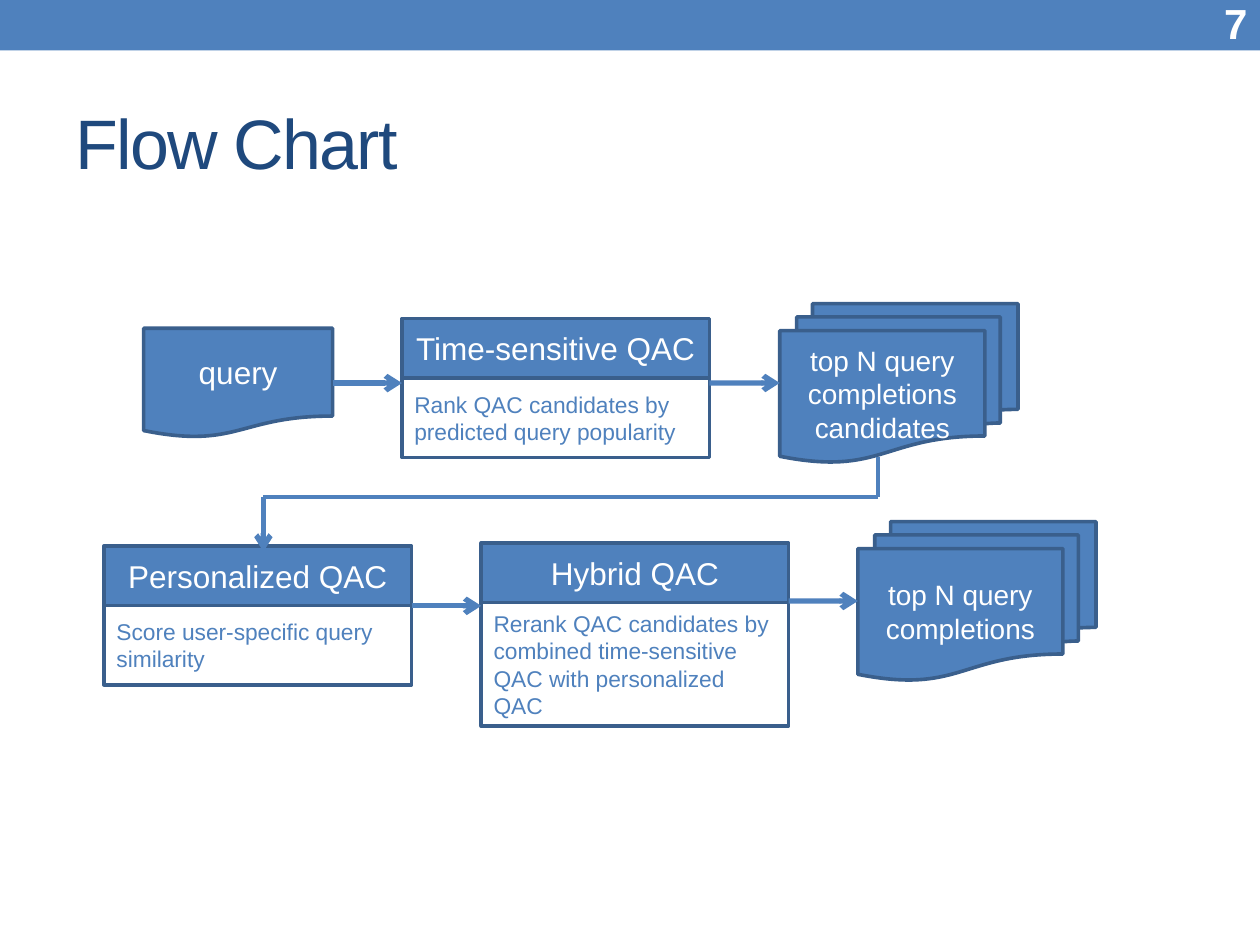
from dataclasses import dataclass

import pptx
import pptx.dml.color
import pptx.enum.shapes
import pptx.enum.text
import pptx.oxml.ns
import pptx.util
from lxml import etree

Pt = pptx.util.Pt
SHAPE = pptx.enum.shapes.MSO_SHAPE
ALIGN = pptx.enum.text.PP_ALIGN
COLORS = {"blue": "4F81BD", "outline": "3A5F8C", "title": "1F497D", "white": "FFFFFF"}
FONT = "Arial"
LEFT_SITE, RIGHT_SITE = 1, 3
STEP_WIDTH, HEADER_HEIGHT = 175.7, 34
STACK_WIDTH, STACK_HEIGHT = 136.1, 90.7


@dataclass
class Step:
    """A process box: coloured header above a white description."""
    left: float
    top: float
    body_height: float
    header: str
    body: str


@dataclass
class Document:
    kind: int
    left: float
    top: float
    width: float
    height: float
    text: str
    size: float


@dataclass
class Link:
    start: tuple
    end: tuple
    width: float = 3
    arrow: bool = True
    source: str = ""
    target: str = ""


STEPS = [
    Step(229.7, 182, 45.4, "Time-sensitive QAC",
         "Rank QAC candidates by predicted query popularity"),
    Step(59.5, 312, 45.4, "Personalized QAC", "Score user-specific query similarity"),
    Step(275, 310.3, 70.6, "Hybrid QAC",
         "Rerank QAC candidates by combined time-sensitive QAC with personalized QAC"),
]

DOCUMENTS = {
    "query": Document(SHAPE.FLOWCHART_DOCUMENT, 82.1, 187.6, 108, 62.6, "query", 18),
    "candidates": Document(SHAPE.FLOWCHART_MULTIDOCUMENT, 445.6, 173.5, STACK_WIDTH,
                           STACK_HEIGHT, "top N query completions\ncandidates", 16),
    "completions": Document(SHAPE.FLOWCHART_MULTIDOCUMENT, 490.2, 298.1, STACK_WIDTH,
                            STACK_HEIGHT, "top N query completions", 16),
}

LINKS = [
    Link((190.1, 218.9), (229.7, 218.9), source="query"),
    Link((405.4, 218.9), (445.6, 218.9), target="candidates"),
    Link((235.2, 346.2), (275, 346.2)),
    Link((450.7, 343.4), (490.2, 343.4), target="completions"),
    # Elbow from the first row down to the second
    Link((501.8, 261.4), (501.8, 284.2), width=2.25, arrow=False),
    Link((501.8, 284.2), (150.5, 284.2), width=2.25, arrow=False),
    Link((150.5, 284.2), (150.5, 315.2)),
]


def color(name: str) -> pptx.dml.color.RGBColor:
    return pptx.dml.color.RGBColor.from_string(COLORS[name])


def write_text(shape, text: str, *, size: float, color_name: str = "white",
               align=ALIGN.CENTER, bold: bool = False, spacing: int = 0) -> None:
    frame = shape.text_frame
    frame.word_wrap = True
    frame.vertical_anchor = pptx.enum.text.MSO_ANCHOR.MIDDLE
    frame.text = text
    for paragraph in frame.paragraphs:
        paragraph.alignment = align
        for run in paragraph.runs:
            run.font.name = FONT
            run.font.size = Pt(size)
            run.font.bold = bold
            run.font.color.rgb = color(color_name)
            if spacing:
                run.font._element.set("spc", str(spacing))


def add_box(slide, kind, left: float, top: float, width: float, height: float,
            fill: str = "blue", outlined: bool = True):
    shape = slide.shapes.add_shape(kind, Pt(left), Pt(top), Pt(width), Pt(height))
    shape.shadow.inherit = False
    shape.fill.solid()
    shape.fill.fore_color.rgb = color(fill)
    if outlined:
        shape.line.color.rgb = color("outline")
        shape.line.width = Pt(2.08)
    else:
        shape.line.fill.background()
    return shape


def add_step(slide, step: Step) -> None:
    header = add_box(slide, SHAPE.RECTANGLE, step.left, step.top, STEP_WIDTH, HEADER_HEIGHT)
    write_text(header, step.header, size=18)
    body = add_box(slide, SHAPE.RECTANGLE, step.left, step.top + HEADER_HEIGHT,
                   STEP_WIDTH, step.body_height, fill="white")
    write_text(body, step.body, size=13, color_name="blue", align=ALIGN.LEFT)


def add_document(slide, document: Document):
    shape = add_box(slide, document.kind, document.left, document.top,
                    document.width, document.height)
    write_text(shape, document.text, size=document.size)
    return shape


def add_link(slide, link: Link, documents: dict) -> None:
    connector = slide.shapes.add_connector(
        pptx.enum.shapes.MSO_CONNECTOR.STRAIGHT,
        *(Pt(value) for value in link.start + link.end))
    connector.line.color.rgb = color("blue")
    connector.line.width = Pt(link.width)
    if link.source:
        connector.begin_connect(documents[link.source], RIGHT_SITE)
    if link.target:
        connector.end_connect(documents[link.target], LEFT_SITE)
    if link.arrow:
        etree.SubElement(connector.line._get_or_add_ln(),
                         pptx.oxml.ns.qn("a:tailEnd"), type="arrow")
    etree.SubElement(connector._element.spPr, pptx.oxml.ns.qn("a:effectLst"))


def add_label(slide, left: float, top: float, width: float, height: float,
              text: str, **text_format) -> None:
    box = slide.shapes.add_textbox(Pt(left), Pt(top), Pt(width), Pt(height))
    write_text(box, text, **text_format)


def main() -> None:
    presentation = pptx.Presentation()
    presentation.slide_width, presentation.slide_height = Pt(720), Pt(540)
    slide = presentation.slides.add_slide(presentation.slide_layouts[6])

    # Top band, title and page number
    add_box(slide, SHAPE.RECTANGLE, 0, 0, 720, 28.8, outlined=False)
    add_label(slide, 36, 41.8, 648, 77.8, "Flow Chart", size=40,
              color_name="title", align=ALIGN.LEFT, spacing=-100)
    add_label(slide, 635.8, 0, 84.2, 26, "7", size=24, align=ALIGN.RIGHT, bold=True)

    # Flow chart
    for step in STEPS:
        add_step(slide, step)
    documents = {name: add_document(slide, document)
                 for name, document in DOCUMENTS.items()}
    for link in LINKS:
        add_link(slide, link, documents)

    presentation.save("out.pptx")


if __name__ == "__main__":
    main()
